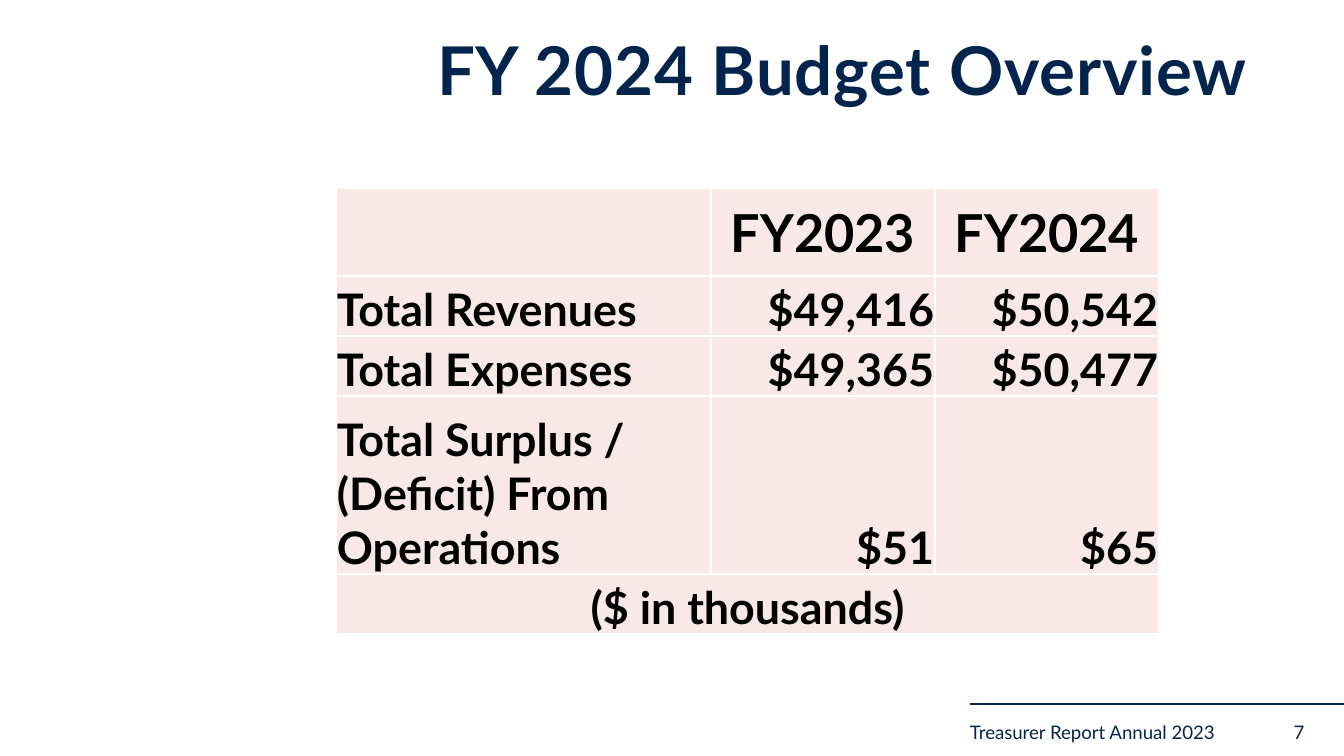
from dataclasses import dataclass
from typing import Optional

from lxml import etree
from pptx import Presentation
from pptx import util as u
from pptx.dml.color import RGBColor
from pptx.enum import shapes, text
from pptx.oxml import ns

EMU_PER_PX = 914400 / 134.4
NAVY = RGBColor(0x03, 0x25, 0x4D)
BLACK = RGBColor(0x00, 0x00, 0x00)
WHITE = RGBColor(0xFF, 0xFF, 0xFF)
BLUSH = RGBColor(0xF8, 0xE8, 0xE8)
FONT = "Lato"
LEFT, CENTER, RIGHT = text.PP_ALIGN.LEFT, text.PP_ALIGN.CENTER, text.PP_ALIGN.RIGHT
MIDDLE, BOTTOM = text.MSO_ANCHOR.MIDDLE, text.MSO_ANCHOR.BOTTOM


@dataclass(frozen=True)
class Label:
    words: str
    left: int
    top: int
    width: int
    height: int
    size: int
    bold: bool = False
    align: text.PP_ALIGN = LEFT
    line_spacing: Optional[float] = None
    tracking: Optional[int] = None


@dataclass(frozen=True)
class BudgetRow:
    entries: tuple[str, ...]
    height: int
    size: int = 24
    aligns: tuple[text.PP_ALIGN, ...] = (LEFT, RIGHT, RIGHT)
    anchor: text.MSO_ANCHOR = BOTTOM


LABELS = (
    Label("FY 2024 Budget Overview", 437, 34, 840, 79, 36,
          bold=True, line_spacing=0.9, tracking=50),
    Label("Treasurer Report Annual 2023", 970, 707, 263, 50, 10),
    Label("7", 1254, 707, 90, 50, 10, align=CENTER),
)
BUDGET = (
    BudgetRow(("", "FY2023", "FY2024"), 88, 28, (CENTER,) * 3, MIDDLE),
    BudgetRow(("Total Revenues", "$49,416", "$50,542"), 60),
    BudgetRow(("Total Expenses", "$49,365", "$50,477"), 60),
    BudgetRow(("Total Surplus / (Deficit) From Operations", "$51", "$65"), 178),
    BudgetRow(("($ in thousands)", "", ""), 60, aligns=(CENTER,) * 3),
)
COLUMN_WIDTHS = (375, 224, 224)


def px(length: int) -> u.Emu:
    return u.Emu(round(length * EMU_PER_PX))


def write(frame, words: str, *, size: int, color: RGBColor, bold: bool = False,
          align: text.PP_ALIGN = LEFT, line_spacing: Optional[float] = None,
          tracking: Optional[int] = None) -> None:
    frame.word_wrap = True
    paragraph = frame.paragraphs[0]
    paragraph.alignment = align
    if line_spacing is not None:
        paragraph.line_spacing = line_spacing
    run = paragraph.add_run()
    run.text = words
    run.font.name = FONT
    run.font.size = u.Pt(size)
    run.font.bold = bold
    run.font.color.rgb = color
    if tracking is not None:
        run.font._element.set("spc", str(tracking))


def add_label(slide, label: Label) -> None:
    box = slide.shapes.add_textbox(
        px(label.left), px(label.top), px(label.width), px(label.height))
    frame = box.text_frame
    frame.margin_left = frame.margin_right = frame.margin_top = frame.margin_bottom = 0
    frame.vertical_anchor = MIDDLE
    write(frame, label.words, size=label.size, color=NAVY, bold=label.bold,
          align=label.align, line_spacing=label.line_spacing, tracking=label.tracking)


def style_cell(cell, anchor: text.MSO_ANCHOR) -> None:
    cell.margin_left = cell.margin_right = cell.margin_top = px(1)
    cell.margin_bottom = 0
    cell.vertical_anchor = anchor
    properties = cell._tc.get_or_add_tcPr()
    for side in ("a:lnL", "a:lnR", "a:lnT", "a:lnB"):
        border = etree.SubElement(properties, ns.qn(side), w=str(u.Pt(1)))
        fill = etree.SubElement(border, ns.qn("a:solidFill"))
        etree.SubElement(fill, ns.qn("a:srgbClr"), val=str(WHITE))
    cell.fill.solid()
    cell.fill.fore_color.rgb = BLUSH


def add_budget(slide, left: int, top: int) -> None:
    table = slide.shapes.add_table(
        len(BUDGET), len(COLUMN_WIDTHS), px(left), px(top),
        px(sum(COLUMN_WIDTHS)), px(sum(row.height for row in BUDGET))).table
    table.first_row = table.horz_banding = False
    for column, width in zip(table.columns, COLUMN_WIDTHS):
        column.width = px(width)
    for r, row in enumerate(BUDGET):
        table.rows[r].height = px(row.height)
        for c, (entry, align) in enumerate(zip(row.entries, row.aligns)):
            cell = table.cell(r, c)
            style_cell(cell, row.anchor)
            if entry:
                write(cell.text_frame, entry, size=row.size, color=BLACK,
                      bold=True, align=align)
    last = len(BUDGET) - 1
    table.cell(last, 0).merge(table.cell(last, len(COLUMN_WIDTHS) - 1))


def add_rule(slide, left: int, right: int, y: int) -> None:
    rule = slide.shapes.add_connector(
        shapes.MSO_CONNECTOR.STRAIGHT, px(left), px(y), px(right), px(y))
    rule.line.color.rgb = NAVY
    rule.line.width = u.Pt(1)
    etree.SubElement(rule._element.spPr, ns.qn("a:effectLst"))


def main() -> None:
    deck = Presentation()
    deck.slide_width, deck.slide_height = px(1344), px(756)
    slide = deck.slides.add_slide(deck.slide_layouts[6])
    add_rule(slide, 970, 1344, 704)
    for label in LABELS:
        add_label(slide, label)
    add_budget(slide, 336, 188)
    deck.save("out.pptx")


if __name__ == "__main__":
    main()
